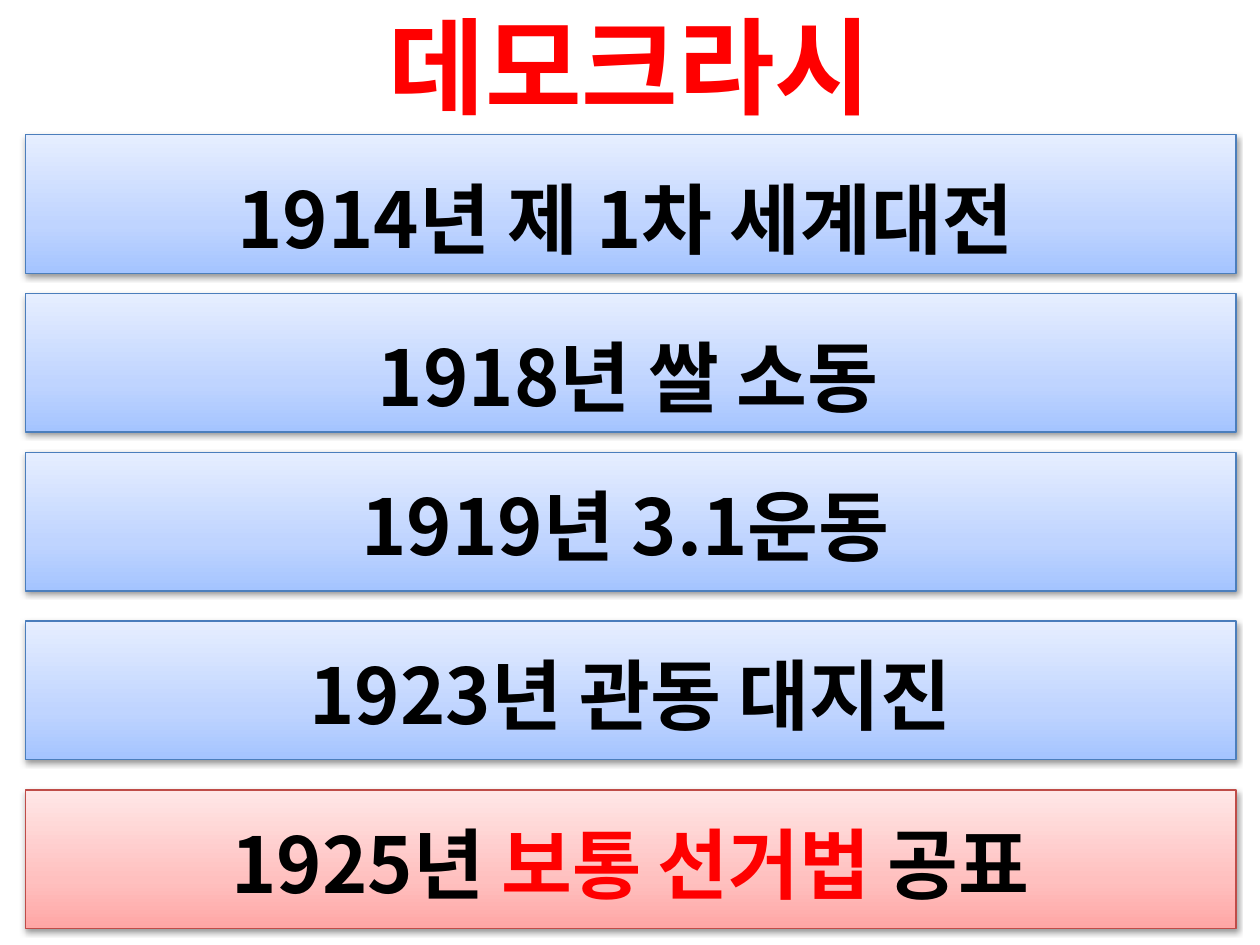
from lxml import etree
from pptx import Presentation
from pptx.dml.color import RGBColor
from pptx.enum.shapes import MSO_SHAPE
from pptx.enum.text import MSO_ANCHOR, PP_ALIGN
from pptx.oxml import parse_xml
from pptx.oxml.ns import qn
from pptx.util import Pt

RECT = MSO_SHAPE.RECTANGLE
CENTER = PP_ALIGN.CENTER
TOP, MIDDLE = MSO_ANCHOR.TOP, MSO_ANCHOR.MIDDLE
NS = 'xmlns:a="http://schemas.openxmlformats.org/drawingml/2006/main"'

FONT = "Noto Sans CJK KR"
COLORS = {"black": "000000", "red": "FF0000",
          "blue line": "4B7EBC", "rose line": "BF4C48"}
# Gradient colours run from the bottom of a bar to its top
FADES = {"blue": ("A4C4FF", "BFD4FF", "E6EEFF"),
         "rose": ("FFA6A5", "FFC0BF", "FFE7E7")}
STOPS = (0, 35, 100)

# Bar top, text offset, text left, text width, tone, runs (text, colour, size)
EVENTS = [
    (77.04, 17.28, 14.4, 686.16, "blue", [("1914년 제 1차 세계대전", "black", 44)]),
    (167.76, 17.28, 17.28, 683.28, "blue", [("1918년 쌀 소동", "black", 44)]),
    (258.48, 11.52, 14.4, 686.16, "blue", [("1919년 3.1운동", "black", 44)]),
    (354.96, 11.52, 14.4, 691.92, "blue", [("1923년 관동 대지진", "black", 44)]),
    (451.44, 11.52, 20.16, 680.4, "rose",
     [("1925년 ", "black", 44), ("보", "red", 44), ("통", "red", 43),
      (" ", "red", 40), ("선거법 ", "red", 44), ("공표", "black", 44)]),
]


class Deck:
    def __init__(self, wide, high):
        self.prs = Presentation()
        self.prs.slide_width, self.prs.slide_height = Pt(wide), Pt(high)
        self.slide = self.prs.slides.add_slide(self.prs.slide_layouts[6])

    def group(self):
        return self.slide.shapes.add_group_shape().shapes

    def text(self, shapes, box, runs, anchor=TOP):
        frame = shapes.add_textbox(*map(Pt, box)).text_frame
        frame.word_wrap = True
        frame.vertical_anchor = anchor
        para = frame.paragraphs[0]
        para.alignment = CENTER
        _, tone, size = runs[0]
        font = para.font
        font.size, font.bold, font.name = Pt(size), True, FONT
        font.color.rgb = RGBColor.from_string(COLORS[tone])
        # East Asian typeface for the Korean letters
        props = para._p.pPr.find(qn("a:defRPr"))
        etree.SubElement(props, qn("a:ea"), typeface=FONT)
        for words, hue, pts in runs:
            run = para.add_run()
            run.text = words
            if hue != tone:
                run.font.color.rgb = RGBColor.from_string(COLORS[hue])
            if pts != size:
                run.font.size = Pt(pts)

    def bar(self, shapes, box, tone):
        shape = shapes.add_shape(RECT, *map(Pt, box))
        shape.line.width = Pt(0.75)
        shape.line.color.rgb = RGBColor.from_string(COLORS[tone + " line"])
        # Three-stop gradient
        shape.fill.gradient()
        grad = shape._element.spPr.find(qn("a:gradFill"))
        stops = "".join(
            f'<a:gs pos="{pos * 1000}"><a:srgbClr val="{hue}"/></a:gs>'
            for pos, hue in zip(STOPS, FADES[tone]))
        grad.getparent().replace(grad, parse_xml(
            f'<a:gradFill {NS} rotWithShape="1"><a:gsLst>{stops}</a:gsLst>'
            '<a:lin ang="16200000" scaled="0"/></a:gradFill>'))
        # Soft shadow below
        shape.shadow.inherit = False
        shape._element.spPr.find(qn("a:effectLst")).append(parse_xml(
            f'<a:outerShdw {NS} blurRad="{Pt(3.1)}" dist="{Pt(1.6)}" '
            'dir="5400000" rotWithShape="0"><a:srgbClr val="000000">'
            '<a:alpha val="38000"/></a:srgbClr></a:outerShdw>'))


def main():
    deck = Deck(720, 540)

    # Title
    deck.text(deck.slide.shapes, (0, -7.92, 720, 90),
              [("데모크라시", "red", 60)], MIDDLE)

    # Timeline bars
    for top, drop, left, wide, tone, runs in EVENTS:
        shapes = deck.group()
        deck.bar(shapes, (14.4, top, 691.92, 79.2), tone)
        deck.text(shapes, (left, top + drop, wide, 60.48), runs)

    deck.prs.save("out.pptx")


if __name__ == "__main__":
    main()
